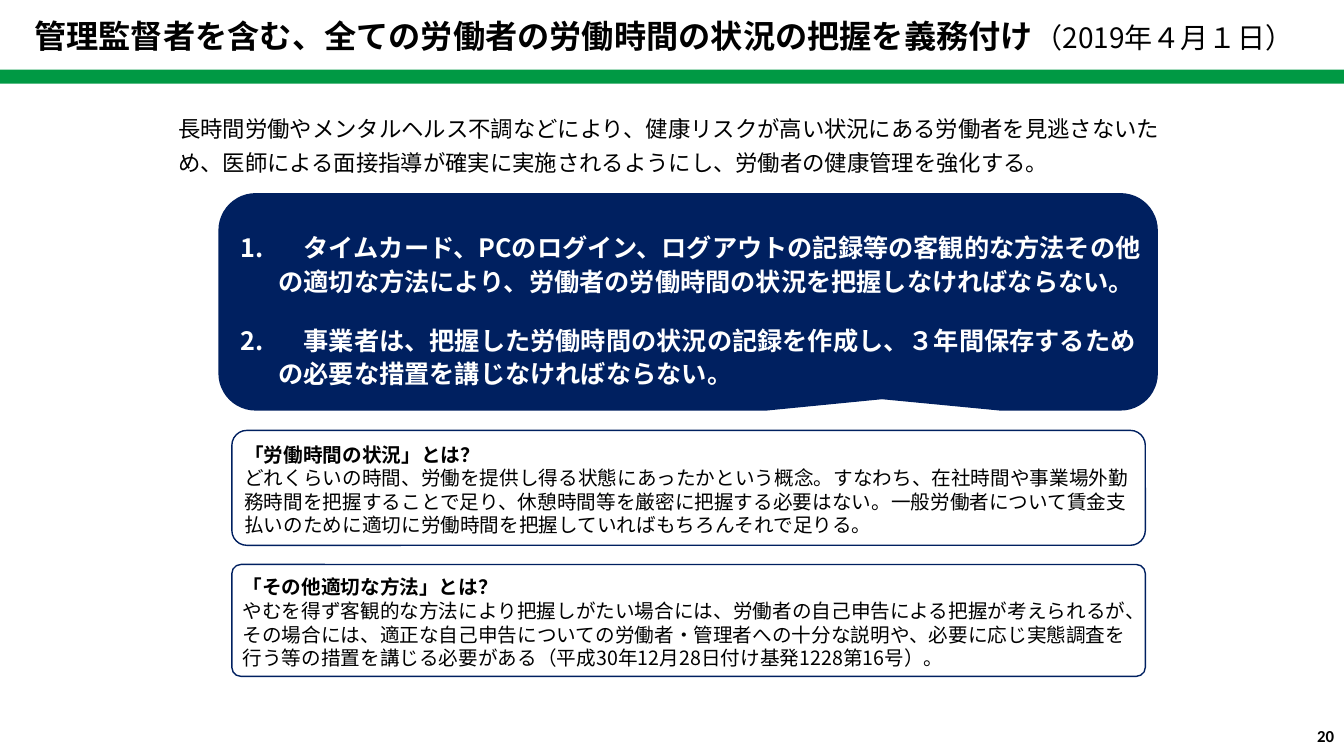
import pptx
import pptx.util
import pptx.dml.color
import pptx.enum.shapes
import pptx.enum.text
import pptx.oxml.ns
import lxml.etree
from dataclasses import dataclass

# Content
TITLE = ("管理監督者を含む、全ての労働者の労働時間の状況の把握を義務付け", "（2019年４月１日）")
INTRO = "長時間労働やメンタルヘルス不調などにより、健康リスクが高い状況にある労働者を見逃さないため、医師による面接指導が確実に実施されるようにし、労働者の健康管理を強化する。"
RULES = [
    "\u3000タイムカード、PCのログイン、ログアウトの記録等の客観的な方法その他の適切な方法により、労働者の労働時間の状況を把握しなければならない。".replace("\u3000", "　"),
    "　事業者は、把握した労働時間の状況の記録を作成し、３年間保存するための必要な措置を講じなければならない。",
]
# Each note: top, height, corner, heading, text
NOTES = [
    (4.27, 1.14, 0.13, "「労働時間の状況」とは？",
     "どれくらいの時間、労働を提供し得る状態にあったかという概念。すなわち、在社時間や事業場外勤務時間を把握することで足り、休憩時間等を厳密に把握する必要はない。一般労働者について賃金支払いのために適切に労働時間を把握していればもちろんそれで足りる。"),
    (5.6, 1.11, 0.08, "「その他適切な方法」とは？",
     "やむを得ず客観的な方法により把握しがたい場合には、労働者の自己申告による把握が考えられるが、その場合には、適正な自己申告についての労働者・管理者への十分な説明や、必要に応じ実態調査を行う等の措置を講じる必要がある（平成30年12月28日付け基発1228第16号）。"),
]
PAGE = "20"


@dataclass(frozen=True)
class Theme:
    face: str = "Noto Sans CJK JP"
    digit: str = "Calibri"
    ink: str = "000000"
    white: str = "FFFFFF"
    navy: str = "002060"
    green: str = "009944"
    title: int = 23
    date: int = 20
    intro: int = 16
    rule: int = 18
    note: int = 14
    page: int = 12


T = Theme()
Inches, Pt = pptx.util.Inches, pptx.util.Pt
SHAPE = pptx.enum.shapes.MSO_SHAPE
ALIGN = pptx.enum.text.PP_ALIGN
ANCHOR = pptx.enum.text.MSO_ANCHOR


def color(code):
    return pptx.dml.color.RGBColor.from_string(code)


def style(font, size, code=T.ink, bold=False, face=T.face):
    font.size, font.bold, font.name = Pt(size), bold, face
    font.color.rgb = color(code)
    east = lxml.etree.Element(pptx.oxml.ns.qn("a:ea"), typeface=face)
    font._element.find(pptx.oxml.ns.qn("a:latin")).addnext(east)


def frame(shape, pads, anchor=ANCHOR.TOP):
    text = shape.text_frame
    text.word_wrap = True
    text.vertical_anchor = anchor
    (text.margin_left, text.margin_top,
     text.margin_right, text.margin_bottom) = map(Inches, pads)
    return text


def block(kind, box, fill=None, line=None, width=1):
    shape = slide.shapes.add_shape(kind, *map(Inches, box))
    shape.shadow.inherit = False
    if fill:
        shape.fill.solid()
        shape.fill.fore_color.rgb = color(fill)
    else:
        shape.fill.background()
    if line:
        shape.line.color.rgb = color(line)
        shape.line.width = Pt(width)
    else:
        shape.line.fill.background()
    return shape


def lines(text, items):
    """Fill a text frame, one paragraph per item."""
    for i, item in enumerate(items):
        para = text.paragraphs[0] if i == 0 else text.add_paragraph()
        para.text = item
        para.alignment = ALIGN.LEFT
        yield i, para


def number(para, indent):
    props = para._p.get_or_add_pPr()
    props.set("marL", str(Inches(indent)))
    props.set("indent", str(-Inches(indent)))
    lxml.etree.SubElement(props, pptx.oxml.ns.qn("a:buFont"), typeface="+mj-lt")
    lxml.etree.SubElement(props, pptx.oxml.ns.qn("a:buAutoNum"), type="arabicPeriod")


deck = pptx.Presentation()
deck.slide_width, deck.slide_height = Inches(13.33), Inches(7.5)
slide = deck.slides.add_slide(deck.slide_layouts[5])

# Title
head = slide.shapes.title
head.left, head.top, head.width, head.height = map(Inches, (0.24, 0.1, 12.97, 0.5))
para = frame(head, (0.1, 0.05, 0.1, 0.05), ANCHOR.MIDDLE).paragraphs[0]
para.alignment = ALIGN.LEFT
for words, size, bold in zip(TITLE, (T.title, T.date), (True, False)):
    run = para.add_run()
    run.text = words
    style(run.font, size, bold=bold)

# Lead text
lead = slide.shapes.add_textbox(*map(Inches, (1.67, 1, 10.08, 0.79)))
for _, para in lines(frame(lead, (0.1, 0.08, 0.1, 0.08)), [INTRO]):
    para.line_spacing = Pt(24)
    style(para.font, T.intro)

# Numbered rules
call = block(SHAPE.ROUNDED_RECTANGULAR_CALLOUT, (2.18, 1.93, 9.29, 2.13), T.navy, T.navy, 2)
for i, value in enumerate((0.207, 0.447, 0.167)):
    call.adjustments[i] = value
for i, para in lines(frame(call, (0.1, 0.24, 0.04, 0.04)), RULES):
    para.line_spacing = Pt(24)
    if i:
        para.space_before = Pt(18)
    number(para, 0.38)
    style(para.font, T.rule, T.white, True)

# Notes
for top, height, corner, *words in NOTES:
    note = block(SHAPE.ROUNDED_RECTANGLE, (2.3, top, 9.06, height), line=T.navy)
    note.adjustments[0] = corner
    for i, para in lines(frame(note, (0.08, 0.08, 0.08, 0.04), ANCHOR.MIDDLE), words):
        style(para.font, T.note, bold=i == 0)

# Green band
block(SHAPE.RECTANGLE, (0, 0.69, 13.33, 0.14), T.green)

# Page number
foot = slide.shapes.add_textbox(*map(Inches, (10.22, 7.1, 3.11, 0.4)))
for _, para in lines(frame(foot, (0.1, 0.05, 0.1, 0.05), ANCHOR.MIDDLE), [PAGE]):
    para.alignment = ALIGN.RIGHT
    style(para.font, T.page, bold=True, face=T.digit)

deck.save("out.pptx")
